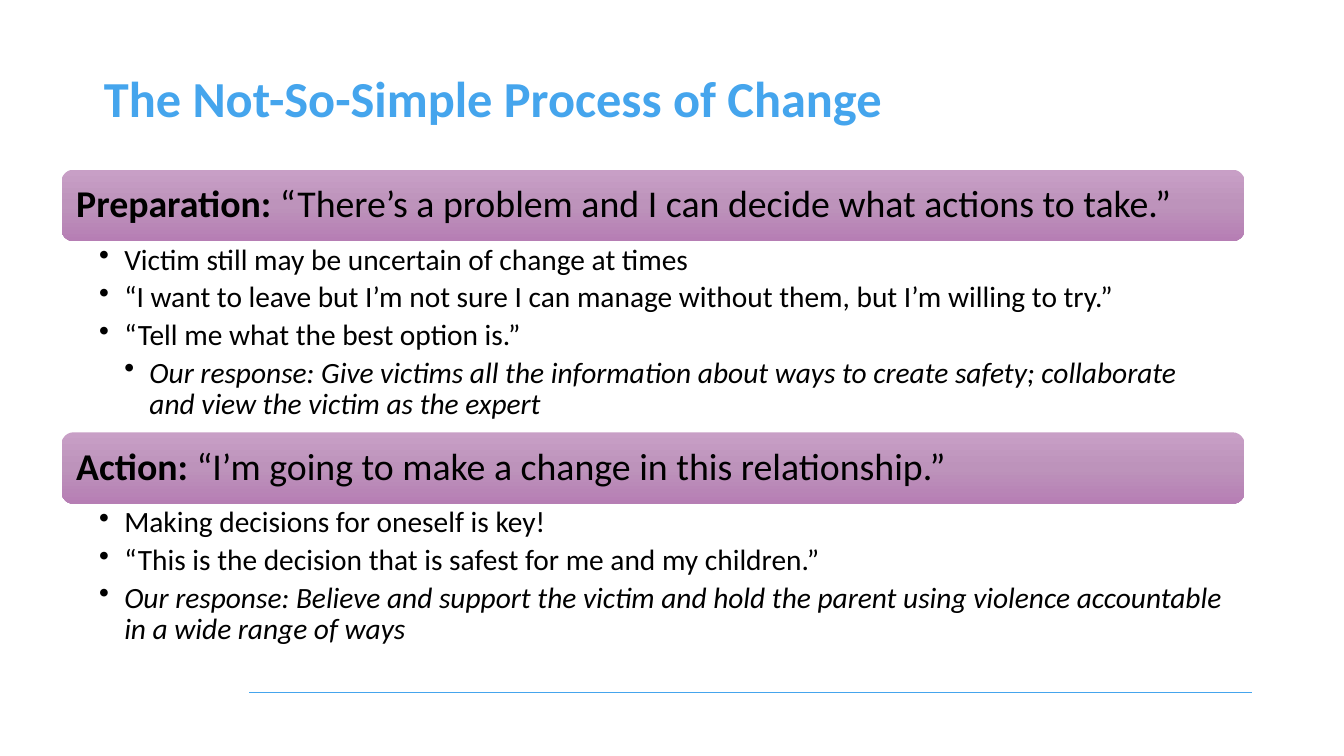
from copy import deepcopy

from lxml import etree
from pptx import Presentation
from pptx.dml.color import RGBColor
from pptx.enum.shapes import MSO_CONNECTOR, MSO_SHAPE
from pptx.enum.text import MSO_ANCHOR, MSO_AUTO_SIZE, PP_ALIGN
from pptx.oxml.ns import qn
from pptx.util import Pt

ROUNDED = MSO_SHAPE.ROUNDED_RECTANGLE
STRAIGHT = MSO_CONNECTOR.STRAIGHT
MIDDLE = MSO_ANCHOR.MIDDLE
NO_AUTOFIT = MSO_AUTO_SIZE.NONE
LEFT = PP_ALIGN.LEFT

BLUE = "45A5ED"
BLACK = "000000"
BAR_GRADIENT = [(0, "C89FC6"), (0.5, "BD93BB"), (1, "B67EB4")]
BAR_LEFT, BAR_WIDTH, BAR_HEIGHT = 44, 845, 51
INDENT = 18

# Each stage: top, name, quote, height of its list, list items (level, italic, text)
STAGES = [
    (121.2, "Preparation: ", "“There’s a problem and I can decide what actions to take.”", 136, [
        (1, False, "Victim still may be uncertain of change at times"),
        (1, False, "“I want to leave but I’m not sure I can manage without them, "
                   "but I’m willing to try.”"),
        (1, False, "“Tell me what the best option is.”"),
        (2, True, "Our response: Give victims all the information about ways to create "
                  "safety; collaborate and view the victim as the expert"),
    ]),
    (308.8, "Action: ", "“I’m going to make a change in this relationship.”", 110, [
        (1, False, "Making decisions for oneself is key!"),
        (1, False, "“This is the decision that is safest for me and my children.”"),
        (1, True, "Our response: Believe and support the victim and hold the parent using "
                  "violence accountable in a wide range of ways"),
    ]),
]


def rgb(value):
    return RGBColor.from_string(value)


def add_span(para, text, size, color=BLACK, bold=False, italic=False):
    para.alignment = LEFT
    para.line_spacing = 0.9
    span = para.add_run()
    span.text = text
    span.font.name = "Calibri"
    span.font.size = Pt(size)
    span.font.color.rgb = rgb(color)
    span.font.bold = bold
    span.font.italic = italic


deck = Presentation()
deck.slide_width, deck.slide_height = Pt(960), Pt(540)
page = deck.slides.add_slide(deck.slide_layouts[5])

rule = page.shapes.add_connector(STRAIGHT, Pt(178), Pt(494.6), Pt(894), Pt(494.6))
rule.line.color.rgb = rgb(BLUE)
rule.line.width = Pt(0.5)
etree.SubElement(rule._element.spPr, qn("a:effectLst"))

title = page.shapes.title
title.left, title.top, title.width, title.height = Pt(67), Pt(38), Pt(605), Pt(69)
title.text_frame.auto_size = NO_AUTOFIT
title.text_frame.vertical_anchor = MIDDLE
add_span(title.text_frame.paragraphs[0], "The Not-So-Simple Process of Change", 36, BLUE, bold=True)

for top, name, quote, list_height, items in STAGES:
    bar = page.shapes.add_shape(ROUNDED, Pt(BAR_LEFT), Pt(top), Pt(BAR_WIDTH), Pt(BAR_HEIGHT))
    bar.shadow.inherit = False
    bar.line.fill.background()
    bar.fill.gradient()
    bar.fill.gradient_angle = 270
    stop_list = bar._element.spPr.find(".//" + qn("a:gsLst"))
    stop_list.append(deepcopy(stop_list[-1]))
    for stop, (position, color) in zip(bar.fill.gradient_stops, BAR_GRADIENT):
        stop.position = position
        stop.color.rgb = rgb(color)

    frame = bar.text_frame
    frame.word_wrap = True
    frame.vertical_anchor = MIDDLE
    frame.margin_left = frame.margin_right = frame.margin_top = frame.margin_bottom = Pt(8)
    add_span(frame.paragraphs[0], name, 27, bold=True)
    add_span(frame.paragraphs[0], quote, 27)

    box = page.shapes.add_textbox(Pt(BAR_LEFT), Pt(top + BAR_HEIGHT), Pt(BAR_WIDTH), Pt(list_height))
    frame = box.text_frame
    frame.word_wrap = True
    frame.margin_left, frame.margin_right = Pt(26.8), Pt(15)
    frame.margin_top = frame.margin_bottom = Pt(2.7)
    for index, (level, italic, text) in enumerate(items):
        para = frame.add_paragraph() if index else frame.paragraphs[0]
        para.level = level
        properties = para._p.get_or_add_pPr()
        properties.set("marL", str(Pt(INDENT * level)))
        properties.set("indent", str(-Pt(INDENT)))
        etree.SubElement(properties, qn("a:buChar"), char="•")
        para.space_after = Pt(4.2)
        add_span(para, text, 21, italic=italic)

deck.save("out.pptx")
